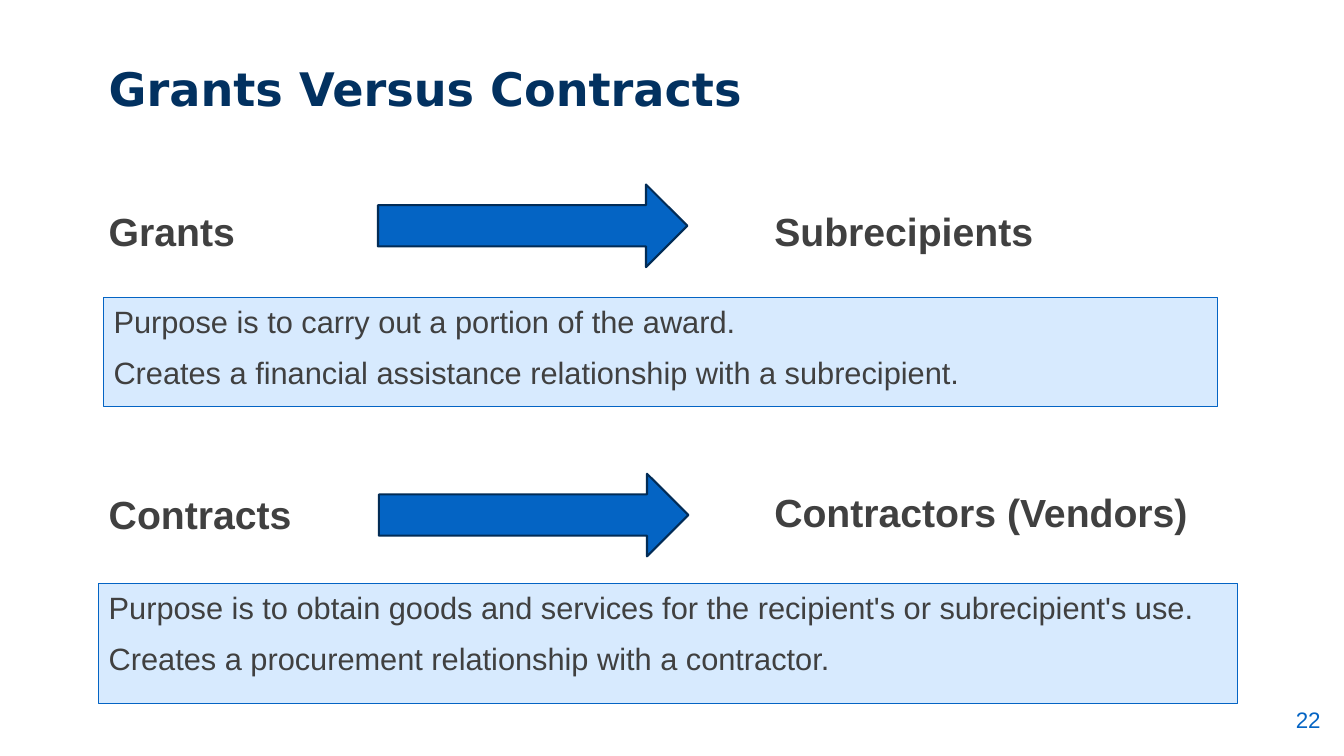
from pptx import Presentation
from pptx.dml.color import RGBColor
from pptx.enum.shapes import MSO_SHAPE
from pptx.enum.text import MSO_ANCHOR, PP_ALIGN
from pptx.util import Pt

COLORS = {
    "title": "023160",
    "text": "404040",
    "accent": "0464C4",
    "arrow_line": "022C56",
    "panel": "D7EAFE",
}
TITLE = {"size": 33, "name": "DejaVu Sans", "bold": True, "color": "title"}
HEADING = {"size": 28, "name": "Arial", "bold": True, "color": "text"}
BODY = {"size": 22, "name": "Arial", "bold": False, "color": "text"}
NUMBER = {"size": 16, "name": "Arial", "bold": False, "color": "accent"}


def rgb(key):
    return RGBColor.from_string(COLORS[key])


def write(tf, lines, style, anchor=MSO_ANCHOR.TOP, **paragraph_format):
    tf.word_wrap = True
    tf.vertical_anchor = anchor
    for i, line in enumerate(lines):
        p = tf.add_paragraph() if i else tf.paragraphs[0]
        for name, value in {"alignment": PP_ALIGN.LEFT, **paragraph_format}.items():
            if i or name != "space_before":
                setattr(p, name, value)
        r = p.add_run()
        r.text = line
        for name, value in style.items():
            if name == "color":
                r.font.color.rgb = rgb(value)
            else:
                setattr(r.font, name, Pt(value) if name == "size" else value)


def add_text(s, box, text, style, **text_format):
    tf = s.shapes.add_textbox(*map(Pt, box)).text_frame
    write(tf, [text], style, **text_format)


def add_heading(s, box, text):
    add_text(s, box, text, HEADING, line_spacing=1.25, space_after=Pt(10))


def add_filled(s, kind, box, fill, line, width):
    sp = s.shapes.add_shape(kind, *map(Pt, box))
    sp.shadow.inherit = False
    sp.fill.solid()
    sp.fill.fore_color.rgb = rgb(fill)
    sp.line.color.rgb = rgb(line)
    sp.line.width = Pt(width)
    return sp


def add_arrow(s, left, top):
    add_filled(s, MSO_SHAPE.RIGHT_ARROW, (left, top, 221, 59),
               "accent", "arrow_line", 1.5)


def add_panel(s, box, lines):
    sp = add_filled(s, MSO_SHAPE.RECTANGLE, box, "panel", "accent", 0.75)
    write(sp.text_frame, lines, BODY, space_before=Pt(10))


def main():
    prs = Presentation()
    prs.slide_width, prs.slide_height = Pt(960), Pt(540)
    s = prs.slides.add_slide(prs.slide_layouts[6])

    add_text(s, (70.6, 24, 813.6, 78), "Grants Versus Contracts", TITLE,
             anchor=MSO_ANCHOR.MIDDLE)

    add_heading(s, (70.6, 136, 297, 50), "Grants")
    add_arrow(s, 270, 131.8)
    add_heading(s, (546, 136, 324, 64), "Subrecipients")
    add_panel(s, (74, 212.4, 795.6, 78), [
        "Purpose is to carry out a portion of the award.",
        "Creates a financial assistance relationship with a subrecipient.",
    ])

    add_heading(s, (70.6, 338.4, 297, 59), "Contracts")
    add_arrow(s, 270.7, 338.4)
    add_heading(s, (546, 336.5, 332, 62), "Contractors (Vendors)")
    add_panel(s, (70.6, 416.9, 813.6, 85.7), [
        "Purpose is to obtain goods and services for the recipient's or subrecipient's use.",
        "Creates a procurement relationship with a contractor.",
    ])

    add_text(s, (884.2, 495.4, 66.2, 31.7), "22", NUMBER, anchor=MSO_ANCHOR.BOTTOM,
             alignment=PP_ALIGN.RIGHT, space_after=Pt(6))
    prs.save("out.pptx")


if __name__ == "__main__":
    main()
